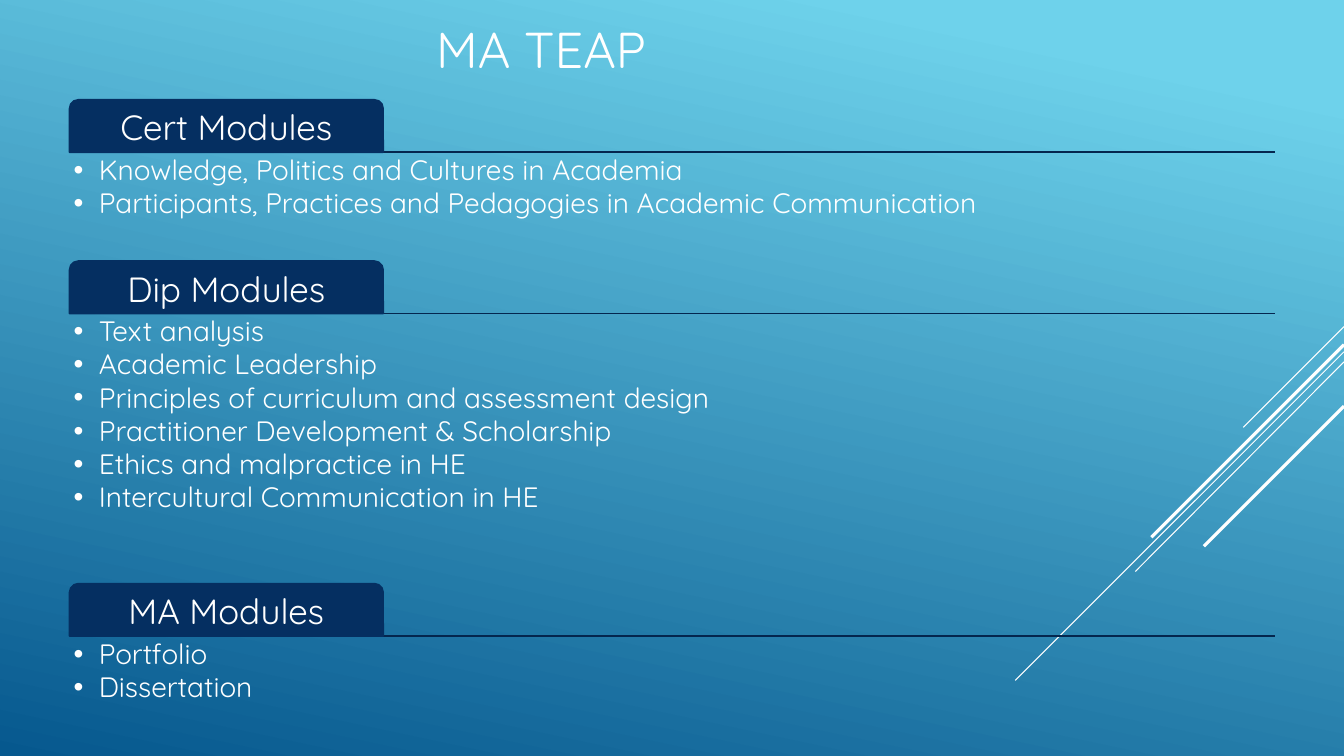
from lxml import etree
from pptx import Presentation
from pptx.dml.color import RGBColor
from pptx.enum.shapes import MSO_CONNECTOR, MSO_SHAPE
from pptx.enum.text import MSO_ANCHOR, MSO_AUTO_SIZE, PP_ALIGN
from pptx.oxml.ns import qn
from pptx.util import Pt

STRAIGHT = MSO_CONNECTOR.STRAIGHT
TAB = MSO_SHAPE.ROUND_2_SAME_RECTANGLE
TOP, MIDDLE = MSO_ANCHOR.TOP, MSO_ANCHOR.MIDDLE
LEFT, CENTER = PP_ALIGN.LEFT, PP_ALIGN.CENTER
NO_FIT = MSO_AUTO_SIZE.NONE

WHITE = RGBColor(0xFF, 0xFF, 0xFF)
NAVY = RGBColor(0x05, 0x2F, 0x61)
DARK = RGBColor(0x04, 0x26, 0x4E)
SKY = RGBColor(0x6E, 0xD2, 0xEB)
DEEP = RGBColor(0x06, 0x58, 0x8E)

PX = 9144  # 100 px to the inch
WIDTH, HEIGHT = 1333, 750
EDGE, SPAN = 69, 1196

# Baseline of each section, list height, heading, modules
SECTIONS = [
    (151, 105, "Cert Modules", [
        "Knowledge, Politics and Cultures in Academia",
        "Participants, Practices and Pedagogies in Academic Communication",
    ]),
    (311, 265, "Dip Modules", [
        "Text analysis",
        "Academic Leadership",
        "Principles of curriculum and assessment design",
        "Practitioner Development & Scholarship",
        "Ethics and malpractice in HE",
        "Intercultural Communication in HE",
    ]),
    (631, 105, "MA Modules", ["Portfolio", "Dissertation"]),
]

# Height at the right edge, then the lower end, then weight
RAYS = [
    (324, 1233, 424, 0.75),
    (349, 1007, 675, 0.75),
    (359, 1126, 567, 0.75),
    (342, 1142, 533, 2.25),
    (403, 1194, 542, 2.25),
]


def assign(item, values):
    for name, value in values.items():
        setattr(item, name, value)


class Deck:
    font = "Quicksand"

    def __init__(self, slide):
        self.slide = slide

    def backdrop(self):
        fill = self.slide.background.fill
        fill.gradient()
        fill.gradient_angle = 258
        for stop, place, color in zip(fill.gradient_stops, (0.1, 1), (SKY, DEEP)):
            stop.position = place
            stop.color.rgb = color

    def place(self, shape, *box):
        names = ("left", "top", "width", "height")
        assign(shape, {name: n * PX for name, n in zip(names, box)})

    def label(self, shape, lines, size, inset, anchor, align, after=0):
        frame = shape.text_frame
        frame.text = "\n".join(lines)
        assign(frame, {"word_wrap": True, "auto_size": NO_FIT,
                       "vertical_anchor": anchor})
        sides = ("left", "top", "right", "bottom")
        assign(frame, {f"margin_{side}": inset * PX for side in sides})
        for para in frame.paragraphs:
            assign(para, {"alignment": align, "line_spacing": 0.9,
                          "space_before": Pt(0), "space_after": Pt(after)})
            for run in para.runs:
                assign(run.font, {"name": self.font, "size": Pt(size),
                                  "bold": False})
                run.font.color.rgb = WHITE

    def title(self, text, *box):
        shape = self.slide.shapes.title
        self.place(shape, *box)
        self.label(shape, [text], 36, 5, MIDDLE, CENTER)

    def bullets(self, shape, lines, *box):
        self.place(shape, *box)
        self.label(shape, lines, 20, 4, TOP, LEFT, after=2.1)
        for para in shape.text_frame.paragraphs:
            props = para._p.get_or_add_pPr()
            props.set("marL", str(25 * PX))
            props.set("indent", str(-25 * PX))
            etree.SubElement(props, qn("a:buChar")).set("char", "•")

    def line(self, x1, y1, x2, y2, color, weight):
        ends = [n * PX for n in (x1, y1, x2, y2)]
        link = self.slide.shapes.add_connector(STRAIGHT, *ends)
        link.line.color.rgb = color
        link.line.width = Pt(weight)
        etree.SubElement(link._element.spPr, qn("a:effectLst"))

    def tab(self, text, *box):
        shape = self.slide.shapes.add_shape(TAB, *[n * PX for n in box])
        shape.shadow.inherit = False
        shape.fill.solid()
        shape.fill.fore_color.rgb = NAVY
        shape.line.color.rgb = NAVY
        shape.line.width = Pt(1.25)
        self.label(shape, [text], 25, 5, MIDDLE, CENTER)
        shape.text_frame.margin_top = 9 * PX


def main():
    show = Presentation()
    assign(show, {"slide_width": WIDTH * PX, "slide_height": HEIGHT * PX})
    slide = show.slides.add_slide(show.slide_layouts.get_by_name("Comparison"))
    deck = Deck(slide)
    deck.backdrop()
    for start, x, y, weight in RAYS:
        deck.line(WIDTH, start, x, y, WHITE, weight)
    deck.title("MA TEAP ", 77, 0, 933, 104)

    bodies = [item for item in slide.placeholders
              if item.placeholder_format.idx > 0]
    for body, (base, tall, head, lines) in zip(bodies, SECTIONS):
        deck.line(EDGE, base, EDGE + SPAN, base, DARK, 1.25)
        deck.tab(head, EDGE, base - 52, 311, 52)
        deck.bullets(body, lines, EDGE, base, SPAN, tall)
    for spare in bodies[len(SECTIONS):]:
        spare._element.getparent().remove(spare._element)
    show.save("out.pptx")


if __name__ == "__main__":
    main()
